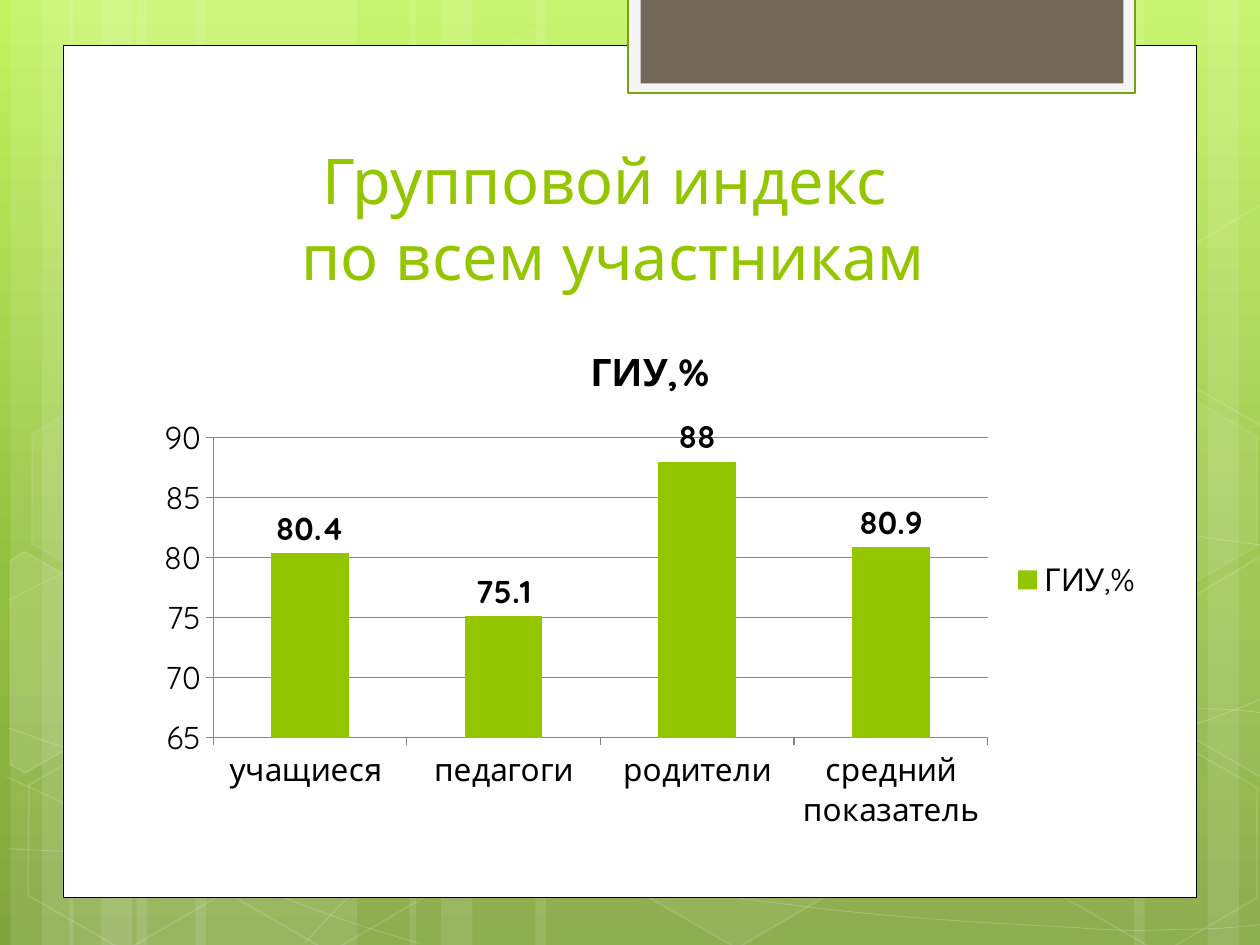
from copy import deepcopy
from lxml.etree import SubElement
from pptx import Presentation
from pptx.chart.data import CategoryChartData
from pptx.dml.color import RGBColor
from pptx.enum.chart import XL_CHART_TYPE, XL_LABEL_POSITION, XL_LEGEND_POSITION, XL_TICK_MARK
from pptx.enum.shapes import MSO_SHAPE
from pptx.enum.text import MSO_ANCHOR, MSO_AUTO_SIZE, PP_ALIGN
from pptx.oxml.ns import qn
from pptx.util import Pt

FONT, LIME, GRAY = "Quicksand", "94C600", "868686"
TITLE = ["Групповой индекс ", "по всем участникам"]
NAME = "ГИУ,%"
DATA = [("учащиеся ", 80.4), ("педагоги", 75.1), ("родители", 88), ("средний показатель", 80.9)]
STOPS = [(0, "C3F35F"), (0.62, "93BF3F"), (1, "81A53E")]

STRIPS = [(78, 126, 0), (6, 36, 0), (24, 60, 0), (111.6, 126, 0), (39.6, 36, 0), (57.6, 60, 0),
          (528, 126, 180), (690, 36, 180), (648, 60, 180),
          (306, 222, 0), (234, 36, 0), (252, 60, 0)]

CURVES = [
    [(5, 485), (44, 487), (83, 489), (137, 488), (191, 487), (258, 486), (330, 479),
     (402, 472), (504, 458), (570, 444), (636, 431), (703, 409), (725, 397)],
    [(5, 343), (26, 332), (47, 321), (87, 310), (128, 300), (186, 284), (250, 279),
     (314, 274), (392, 273), (471, 279), (550, 284), (682, 307), (725, 312)],
    [(4, 444), (91, 484), (178, 523), (240, 539)],
    [(5, 416), (27, 424), (50, 432), (92, 444), (134, 454), (197, 472), (257, 485),
     (317, 497), (392, 510), (452, 517), (512, 525), (576, 528), (614, 530),
     (652, 533), (662, 531), (680, 531), (699, 531), (712, 529), (725, 528)],
    [(174, 539), (187, 525), (200, 510), (217, 498), (235, 485), (259, 470), (279, 460),
     (300, 450), (312, 446), (338, 438), (364, 431), (413, 421), (438, 416),
     (464, 411), (467, 411), (490, 410), (512, 408), (547, 405), (572, 405),
     (597, 404), (638, 405), (638, 405), (654, 405), (670, 405), (686, 405),
     (699, 405), (711, 406), (718, 407), (724, 408), (722, 407), (724, 408)],
]

HEXES = [(240.5, 26, 4, 8), (357.8, 424, 6, 12), (8, 425.5, 0, 12), (10, 224.6, 7, 8),
         (125.3, 426.2, 0, 12), (542.2, 326.2, 10, 12), (600.5, 427, 0, 12), (600.5, 226, 7, 8)]

LEFT = [(0, 8.6), (4.2, 0), (68, 0), (99.4, 55), (68, 109.4), (58.2, 109.4)]
RIGHT = [(0, 54.7), (30.5, 0), (37.3, 0), (97.9, 104), (94.5, 109.4), (31.3, 109.4)]
PARTS = [(LEFT, -23.8, 330.5, 10), (RIGHT, 660.2, 319.7, 4), (RIGHT, 660.2, 118.8, 0)]

PANELS = [((36, 26, 648, 487), "FFFFFF", "000000", 0.5),
          ((359, -1.4, 289.6, 54.7), "F5F5F5", "74A510", 1.25),
          ((366, -1.4, 276, 49), "71685A", None, 0)]


def tint(color, code):
    color.rgb = RGBColor.from_string(code)


def ink(fill, root, code, alpha):
    if code is None or alpha == 0:
        fill.background()
        return
    fill.solid()
    tint(fill.fore_color, code)
    if alpha < 100:
        node = root().find(qn("a:solidFill"))[0]
        SubElement(node, qn("a:alpha")).set("val", str(alpha * 1000))


def style(shape, fill=None, line=None, width=1, clear=100, edge=100):
    shape.shadow.inherit = False
    props = shape.element.spPr
    ink(shape.fill, lambda: props, fill, clear)
    ink(shape.line.fill, lambda: props.find(qn("a:ln")), line, edge)
    if line:
        shape.line.width = Pt(width)


def add(shapes, kind, *box):
    return shapes.add_shape(kind, *map(Pt, box))


def trace(shapes, dots, close):
    dots = [(Pt(x), Pt(y)) for x, y in dots]
    pen = shapes.build_freeform(*dots[0])
    pen.add_line_segments(dots[1:], close=close)
    return pen.convert_to_shape()


def bend(shape):
    route = shape.element.find(".//" + qn("a:path"))
    lines = route.findall(qn("a:lnTo"))
    for i in range(0, len(lines), 3):
        curve = SubElement(route, qn("a:cubicBezTo"))
        for line in lines[i:i + 3]:
            curve.append(line[0])
            route.remove(line)
    return shape


def paint(slide):
    fill = slide.background.fill
    fill.gradient()
    fill.gradient_angle = 270
    tray = slide.element.find(".//" + qn("a:gsLst"))
    tray.append(deepcopy(tray[-1]))
    for stop, (place, code) in zip(fill.gradient_stops, STOPS):
        stop.position = place
        tint(stop.color, code)


def adorn(shapes):
    for x, w, turn in STRIPS:
        strip = add(shapes, MSO_SHAPE.RECTANGLE, x, 0, w, 540)
        strip.rotation = turn
        style(strip, "FFFFFF", clear=10)
    for knots in CURVES:
        style(bend(trace(shapes, knots, False)), None, "FFFFFF", 0.5, edge=20)
    for x, y, clear, edge in HEXES:
        hexa = add(shapes, MSO_SHAPE.HEXAGON, x, y, 126, 109.4)
        hexa.adjustments[0] = 0.285
        hexa.rotation = 30
        style(hexa, "FFFFFF", "FFFFFF", 1, clear, edge)
    for dots, x, y, clear in PARTS:
        part = trace(shapes, [(x + a, y + b) for a, b in dots], True)
        part.rotation = 30
        style(part, "FFFFFF", "FFFFFF", 1, clear, 12)
    for box, fill, line, width in PANELS:
        style(add(shapes, MSO_SHAPE.RECTANGLE, *box), fill, line, width)


def head(title):
    title.element.getparent().append(title.element)
    title.left, title.top, title.width, title.height = map(Pt, (65.3, 81, 570.2, 90))
    frame = title.text_frame
    frame.word_wrap = True
    frame.auto_size = MSO_AUTO_SIZE.NONE
    frame.vertical_anchor = MSO_ANCHOR.BOTTOM
    para = frame.paragraphs[0]
    para.alignment = PP_ALIGN.CENTER
    for i, text in enumerate(TITLE):
        if i:
            para.add_line_break()
        run = para.add_run()
        run.text = text
        run.font.size, run.font.name = Pt(36), FONT
        tint(run.font.color, LIME)


def type_in(font, size=18, bold=False):
    font.size, font.name, font.bold = Pt(size), FONT, bold
    tint(font.color, "000000")


def plot(shapes):
    data = CategoryChartData()
    data.categories = [name for name, _ in DATA]
    data.add_series(NAME, [value for _, value in DATA])
    box = map(Pt, (82.3, 183.1, 578.2, 296.6))
    chart = shapes.add_chart(XL_CHART_TYPE.COLUMN_CLUSTERED, *box, data).chart
    type_in(chart.font)
    chart.has_title = True
    run = chart.chart_title.text_frame.paragraphs[0].add_run()
    run.text = NAME
    type_in(run.font, 21.6, True)
    chart.chart_title.include_in_layout = False
    chart.has_legend = True
    chart.legend.position = XL_LEGEND_POSITION.RIGHT
    chart.legend.include_in_layout = False
    scale = chart.value_axis
    scale.minimum_scale, scale.maximum_scale, scale.major_unit = 65, 90, 5
    scale.has_major_gridlines = True
    for axis in (chart.category_axis, scale):
        axis.major_tick_mark = XL_TICK_MARK.OUTSIDE
    for owner in (chart.category_axis, scale, scale.major_gridlines):
        tint(owner.format.line.color, GRAY)
        owner.format.line.width = Pt(0.75)
    bars = chart.plots[0]
    bars.gap_width, bars.vary_by_categories = 150, False
    row = bars.series[0]
    row.format.fill.solid()
    tint(row.format.fill.fore_color, LIME)
    labels = row.data_labels
    labels.show_value = True
    labels.position = XL_LABEL_POSITION.OUTSIDE_END
    type_in(labels.font, bold=True)


deck = Presentation()
deck.slide_width, deck.slide_height = Pt(720), Pt(540)
slide = deck.slides.add_slide(deck.slide_layouts[5])
paint(slide)
adorn(slide.shapes)
head(slide.shapes.title)
plot(slide.shapes)
deck.save("out.pptx")
